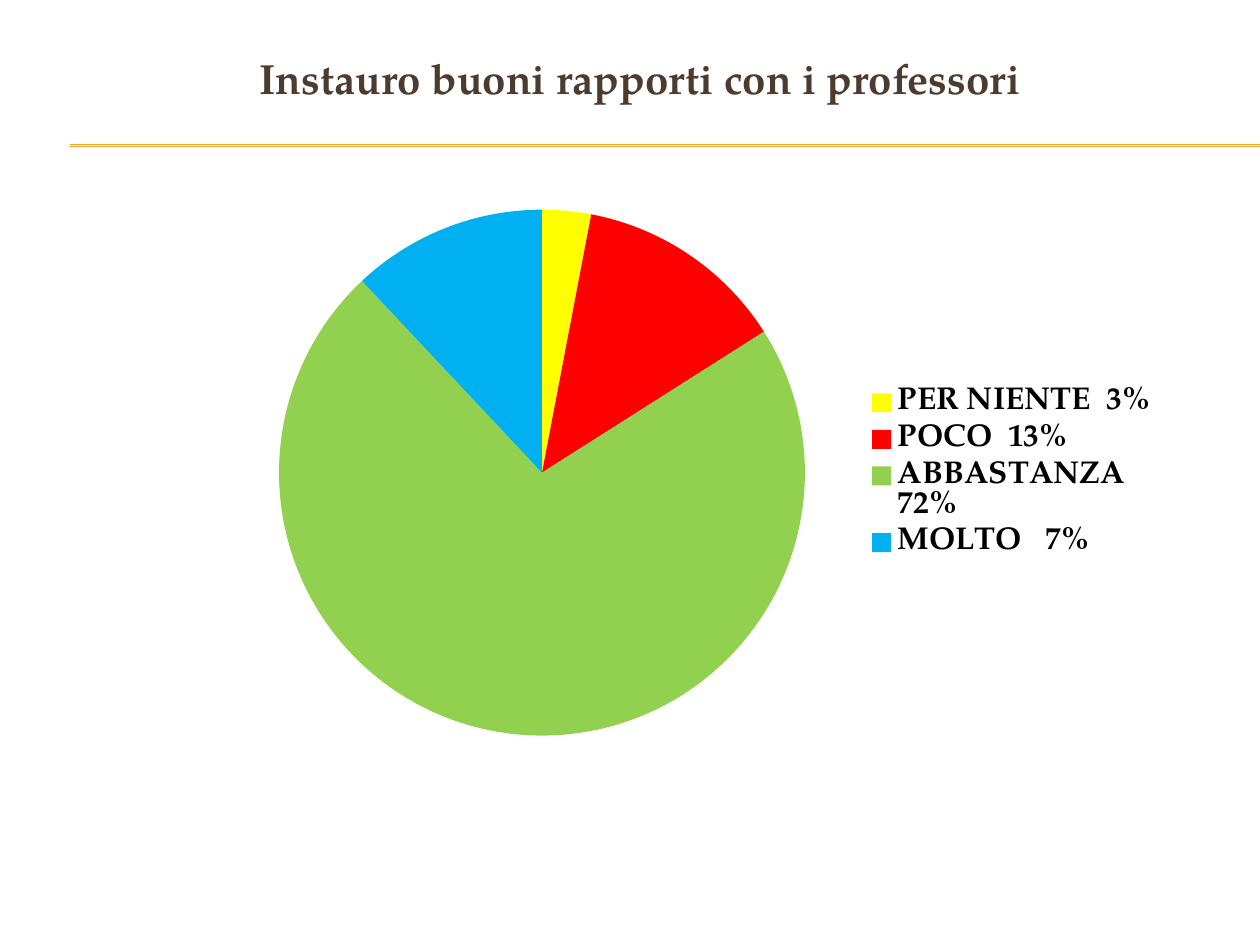
"""Build a slide with a titled pie chart on relations with teachers."""
from dataclasses import dataclass

from lxml.etree import SubElement
from pptx import Presentation
from pptx.chart.chart import Chart
from pptx.chart.data import CategoryChartData
from pptx.dml.color import RGBColor
from pptx.enum.chart import XL_CHART_TYPE as ChartType, XL_LEGEND_POSITION as LegendPos
from pptx.enum.shapes import MSO_CONNECTOR as Connector
from pptx.enum.text import MSO_ANCHOR as Anchor, MSO_AUTO_SIZE as AutoSize, PP_ALIGN as Align
from pptx.oxml.ns import qn
from pptx.slide import Slide
from pptx.util import Cm, Pt

FONT = "TeX Gyre Pagella"
BROWN = RGBColor(0x4E, 0x3B, 0x30)
GOLD = RGBColor(0xF0, 0xA2, 0x2E)
BLACK = RGBColor(0x00, 0x00, 0x00)
YELLOW = RGBColor(0xFF, 0xFF, 0x00)
RED = RGBColor(0xFF, 0x00, 0x00)
GREEN = RGBColor(0x92, 0xD0, 0x50)
BLUE = RGBColor(0x00, 0xB0, 0xF0)


@dataclass(frozen=True)
class Answer:
    label: str
    value: int
    color: RGBColor


ANSWERS = [
    Answer("PER NIENTE  3%", 3, YELLOW),
    Answer("POCO  13%", 13, RED),
    Answer("ABBASTANZA  72%", 72, GREEN),
    Answer("MOLTO   7%", 12, BLUE),
]
RULE_TOPS = (2.92, 2.95)
PIE_AREA = {"x": 0.07, "y": 0.03, "w": 0.55, "h": 0.94}


def set_format(target: object, values: dict) -> None:
    for name, value in values.items():
        setattr(target, name, value)


def set_font(font: object, size: int, color: RGBColor) -> None:
    set_format(font, {"name": FONT, "size": Pt(size), "bold": True})
    font.color.rgb = color


def add_rule(s: Slide, top: float) -> None:
    line = s.shapes.add_connector(Connector.STRAIGHT, Cm(1.42), Cm(top), Cm(25.4), Cm(top))
    line.line.color.rgb = GOLD
    line.line.width = Pt(0.75)
    SubElement(line._element.spPr, qn("a:effectLst"))


def add_title(s: Slide, text: str) -> None:
    sp = s.shapes.title
    set_format(sp, {"left": Cm(0.84), "top": Cm(0.58), "width": Cm(24.13), "height": Cm(1.98)})
    tf = sp.text_frame
    set_format(tf, {"vertical_anchor": Anchor.MIDDLE, "word_wrap": True, "auto_size": AutoSize.NONE})
    p = tf.paragraphs[0]
    p.alignment = Align.CENTER
    r = p.add_run()
    r.text = text
    set_font(r.font, 24, BROWN)


def place_plot(chart: Chart, area: dict[str, float]) -> None:
    plot_area = chart._chartSpace.chart.plotArea
    for old in plot_area.findall(qn("c:layout")):
        plot_area.remove(old)
    layout = SubElement(plot_area, qn("c:layout"))
    plot_area.insert(0, layout)
    manual = SubElement(layout, qn("c:manualLayout"))
    settings = {"layoutTarget": "inner", "xMode": "edge", "yMode": "edge", **area}
    for tag, value in settings.items():
        SubElement(manual, qn(f"c:{tag}")).set("val", str(value))


def add_pie(s: Slide, answers: list[Answer]) -> None:
    data = CategoryChartData()
    data.categories = [a.label for a in answers]
    data.add_series("Series 1", [a.value for a in answers])
    chart = s.shapes.add_chart(
        ChartType.PIE, Cm(4.24), Cm(3.89), Cm(19.38), Cm(11.28), data).chart
    set_format(chart, {"has_title": False, "has_legend": True})
    set_format(chart.legend, {"position": LegendPos.RIGHT, "include_in_layout": True})
    set_font(chart.font, 18, BLACK)
    set_font(chart.legend.font, 18, BLACK)
    plot = chart.plots[0]
    plot.vary_by_categories = True
    for i, answer in enumerate(answers):
        fill = plot.series[0].points[i].format.fill
        fill.solid()
        fill.fore_color.rgb = answer.color
    place_plot(chart, PIE_AREA)


def main() -> None:
    prs = Presentation()
    set_format(prs, {"slide_width": Cm(25.4), "slide_height": Cm(19.05)})
    s = prs.slides.add_slide(prs.slide_layouts[5])
    for top in RULE_TOPS:
        add_rule(s, top)
    add_title(s, "Instauro buoni rapporti con i professori")
    add_pie(s, ANSWERS)
    prs.save("out.pptx")


if __name__ == "__main__":
    main()
